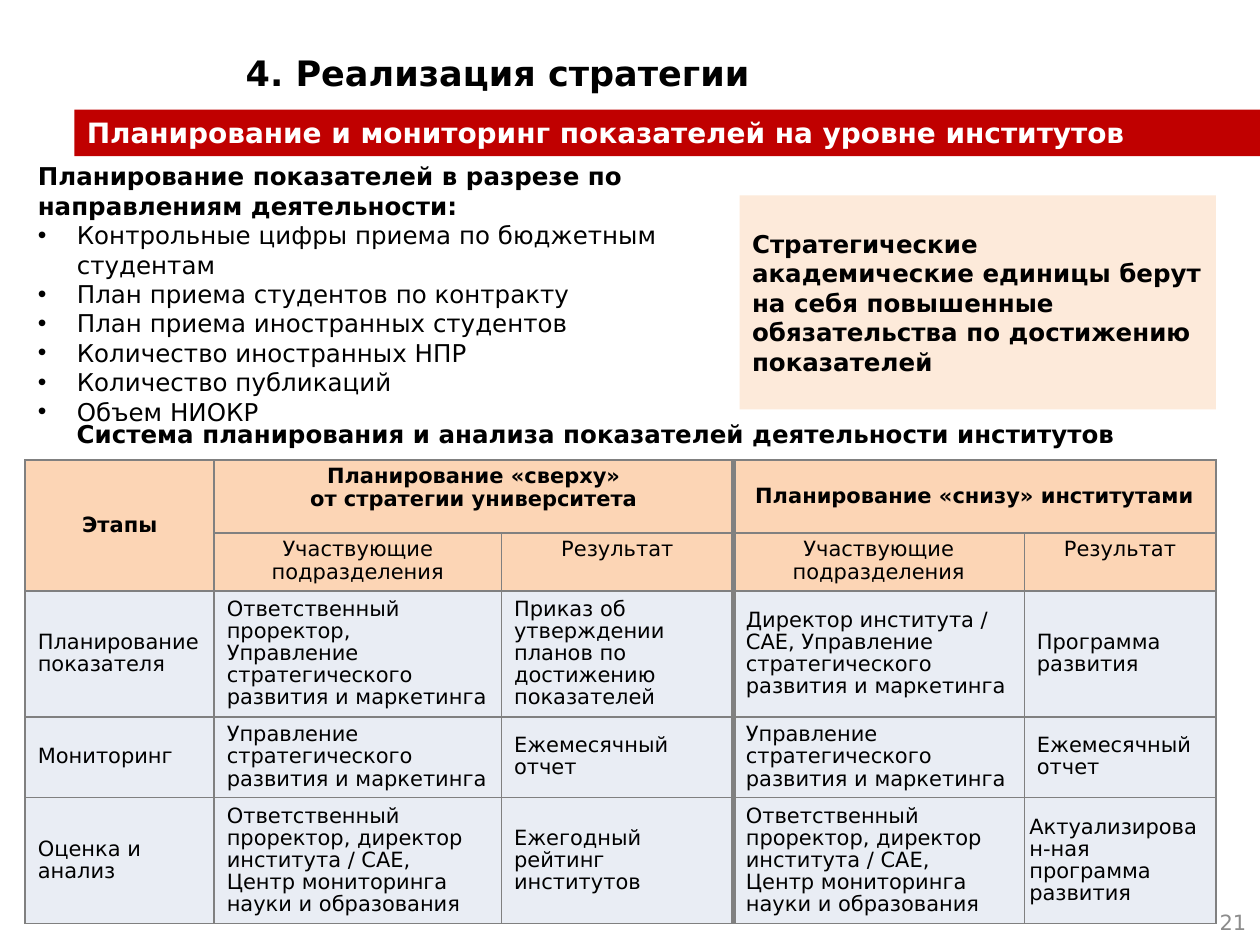
from dataclasses import dataclass

from lxml import etree
from pptx import Presentation
from pptx.dml.color import RGBColor
from pptx.enum.shapes import MSO_SHAPE
from pptx.enum.text import MSO_ANCHOR, MSO_AUTO_SIZE, PP_ALIGN
from pptx.oxml.ns import qn
from pptx.util import Inches, Pt

LEFT, CENTER, RIGHT = PP_ALIGN.LEFT, PP_ALIGN.CENTER, PP_ALIGN.RIGHT
TOP, MIDDLE = MSO_ANCHOR.TOP, MSO_ANCHOR.MIDDLE
RECT = MSO_SHAPE.RECTANGLE
NO_FIT = MSO_AUTO_SIZE.NONE
GRID_COLS, GRID_ROWS = 100, 75


@dataclass(frozen=True)
class Theme:
    font: str = "DejaVu Sans"
    ink: str = "000000"
    white: str = "FFFFFF"
    muted: str = "8C8C8C"
    banner: str = "C00000"
    callout: str = "FDEADA"
    header: str = "FCD5B5"
    row: str = "E9EDF4"
    border: str = "808080"
    title_size: int = 20
    banner_size: int = 16
    body_size: int = 14
    small_size: int = 12
    thin: int = 1
    thick: int = 3


THEME = Theme()

DIRECTIONS = [
    "Контрольные цифры приема по бюджетным студентам",
    "План приема студентов по контракту",
    "План приема иностранных студентов",
    "Количество иностранных НПР",
    "Количество публикаций",
    "Объем НИОКР",
]
UNITS = "Участвующие подразделения"
STRATEGY = "Управление стратегического развития и маркетинга"
REVIEW = ("Ответственный проректор, директор института / САЕ,\v"
          "Центр мониторинга науки и образования")
STAGES = [
    ["Этапы", "Планирование «сверху»\vот стратегии университета", "",
     "Планирование «снизу» институтами", ""],
    ["", UNITS, "Результат", UNITS, "Результат"],
    ["Планирование показателя", "Ответственный проректор,\n" + STRATEGY,
     "Приказ об утверждении планов по достижению показателей",
     "Директор института / САЕ, " + STRATEGY, "Программа развития"],
    ["Мониторинг", STRATEGY, "Ежемесячный отчет", STRATEGY, "Ежемесячный отчет"],
    ["Оценка и анализ", REVIEW, "Ежегодный рейтинг институтов", REVIEW,
     "Актуализирован-ная программа развития"],
]
COL_WIDTHS = [15, 22.8, 18.4, 23.1, 15.2]
ROW_HEIGHTS = [5.8, 4.6, 10, 6.4, 10]
MERGES = [((0, 0), (1, 0)), ((0, 1), (0, 2)), ((0, 3), (0, 4))]


def grid_box(prs, col, row, cols, rows):
    cw, rh = prs.slide_width / GRID_COLS, prs.slide_height / GRID_ROWS
    return int(col * cw), int(row * rh), int(cols * cw), int(rows * rh)


def place(sp, box):
    sp.left, sp.top, sp.width, sp.height = box


def style(font, size, color, bold):
    font.name, font.size, font.bold = THEME.font, Pt(size), bold
    font.color.rgb = RGBColor.from_string(color)


def write(tf, text, size, color=THEME.ink, bold=False, align=LEFT, anchor=TOP, spacing=1.0):
    tf.word_wrap = True
    tf.vertical_anchor = anchor
    for i, part in enumerate(text.split("\n")):
        p = tf.paragraphs[0] if i == 0 else tf.add_paragraph()
        p.alignment, p.line_spacing, p.space_before = align, spacing, Pt(0)
        for j, line in enumerate(part.split("\v")):
            if j:
                p.add_line_break()
            r = p.add_run()
            r.text = line
            style(r.font, size, color, bold)


def set_bullet(p, char=None):
    pPr = p._p.get_or_add_pPr()
    hang = Inches(0.31) if char else 0
    pPr.set("marL", str(hang))
    pPr.set("indent", str(-hang))
    if char:
        etree.SubElement(pPr, qn("a:buFont")).set("typeface", "Arial")
        etree.SubElement(pPr, qn("a:buChar")).set("char", char)
    else:
        etree.SubElement(pPr, qn("a:buNone"))


def set_border(cell, side, width):
    ln = etree.SubElement(cell._tc.get_or_add_tcPr(), qn("a:ln" + side), w=str(Pt(width)))
    fill = etree.SubElement(ln, qn("a:solidFill"))
    etree.SubElement(fill, qn("a:srgbClr")).set("val", THEME.border)


def add_title(s, box):
    sp = s.shapes.title
    place(sp, box)
    sp.text_frame.auto_size = NO_FIT
    write(sp.text_frame, "4. Реализация стратегии", THEME.title_size, bold=True)


def add_panel(s, box, text, fill, size, color, anchor):
    sp = s.shapes.add_shape(RECT, *box)
    sp.shadow.inherit = False
    sp.fill.solid()
    sp.fill.fore_color.rgb = RGBColor.from_string(fill)
    sp.line.fill.background()
    write(sp.text_frame, text, size, color, True, anchor=anchor)


def add_directions(s, box):
    sp = s.placeholders[1]
    place(sp, box)
    tf = sp.text_frame
    tf.auto_size = NO_FIT
    heading = "Планирование показателей в разрезе по направлениям деятельности:"
    write(tf, heading, THEME.body_size, bold=True)
    set_bullet(tf.paragraphs[0])
    for text in DIRECTIONS:
        p = tf.add_paragraph()
        p.space_before = Pt(0)
        set_bullet(p, "•")
        r = p.add_run()
        r.text = text
        style(r.font, THEME.body_size, THEME.ink, False)


def add_label(s, box, text, size, **look):
    sp = s.shapes.add_textbox(*box)
    write(sp.text_frame, text, size, **look)


def format_cell(cell, row, col, text):
    is_header = row < 2
    thick_left = col == 3
    thick_right = col == 2 or (row, col) == (0, 1)
    for side, thick in zip("LRTB", (thick_left, thick_right, False, False)):
        set_border(cell, side, THEME.thick if thick else THEME.thin)
    cell.fill.solid()
    cell.fill.fore_color.rgb = RGBColor.from_string(THEME.header if is_header else THEME.row)
    top_anchored = row == 1 or (row, col) == (0, 1)
    cell.vertical_anchor = TOP if top_anchored else MIDDLE
    if (row, col) == (4, 4):
        cell.margin_left = cell.margin_right = Inches(0.04)
    if text:
        tf = cell.text_frame
        write(tf, text, THEME.small_size, bold=row == 0,
              align=CENTER if is_header else LEFT, anchor=None, spacing=0.9)


def add_stages(s, box):
    width, height = box[2:]
    table = s.shapes.add_table(len(STAGES), len(COL_WIDTHS), *box).table
    for column, share in zip(table.columns, COL_WIDTHS):
        column.width = int(width * share / sum(COL_WIDTHS))
    for row, share in zip(table.rows, ROW_HEIGHTS):
        row.height = int(height * share / sum(ROW_HEIGHTS))
    for start, end in MERGES:
        table.cell(*start).merge(table.cell(*end))
    for i, texts in enumerate(STAGES):
        for j, text in enumerate(texts):
            format_cell(table.cell(i, j), i, j, text)


def main():
    prs = Presentation()
    prs.slide_width, prs.slide_height = Inches(10), Inches(7.5)
    s = prs.slides.add_slide(prs.slide_layouts[1])
    add_title(s, grid_box(prs, 18.5, 3.6, 81.5, 3.9))
    add_panel(s, grid_box(prs, 5.9, 8.7, 94.1, 3.7),
              "Планирование и мониторинг показателей на уровне институтов",
              THEME.banner, THEME.banner_size, THEME.white, TOP)
    add_directions(s, grid_box(prs, 2, 12.3, 59.8, 22.2))
    add_panel(s, grid_box(prs, 58.7, 15.5, 37.8, 17),
              "Стратегические академические единицы берут на себя повышенные "
              "обязательства по достижению показателей",
              THEME.callout, THEME.body_size, THEME.ink, MIDDLE)
    add_label(s, grid_box(prs, 5.1, 32.8, 91.4, 3.4),
              "Система планирования и анализа показателей деятельности институтов",
              THEME.body_size, bold=True)
    add_stages(s, grid_box(prs, 2, 36.5, 94.5, 36.8))
    add_label(s, grid_box(prs, 76.6, 71.2, 23.3, 4), "21", THEME.small_size,
              color=THEME.muted, align=RIGHT, anchor=MIDDLE)
    prs.save("out.pptx")


if __name__ == "__main__":
    main()
